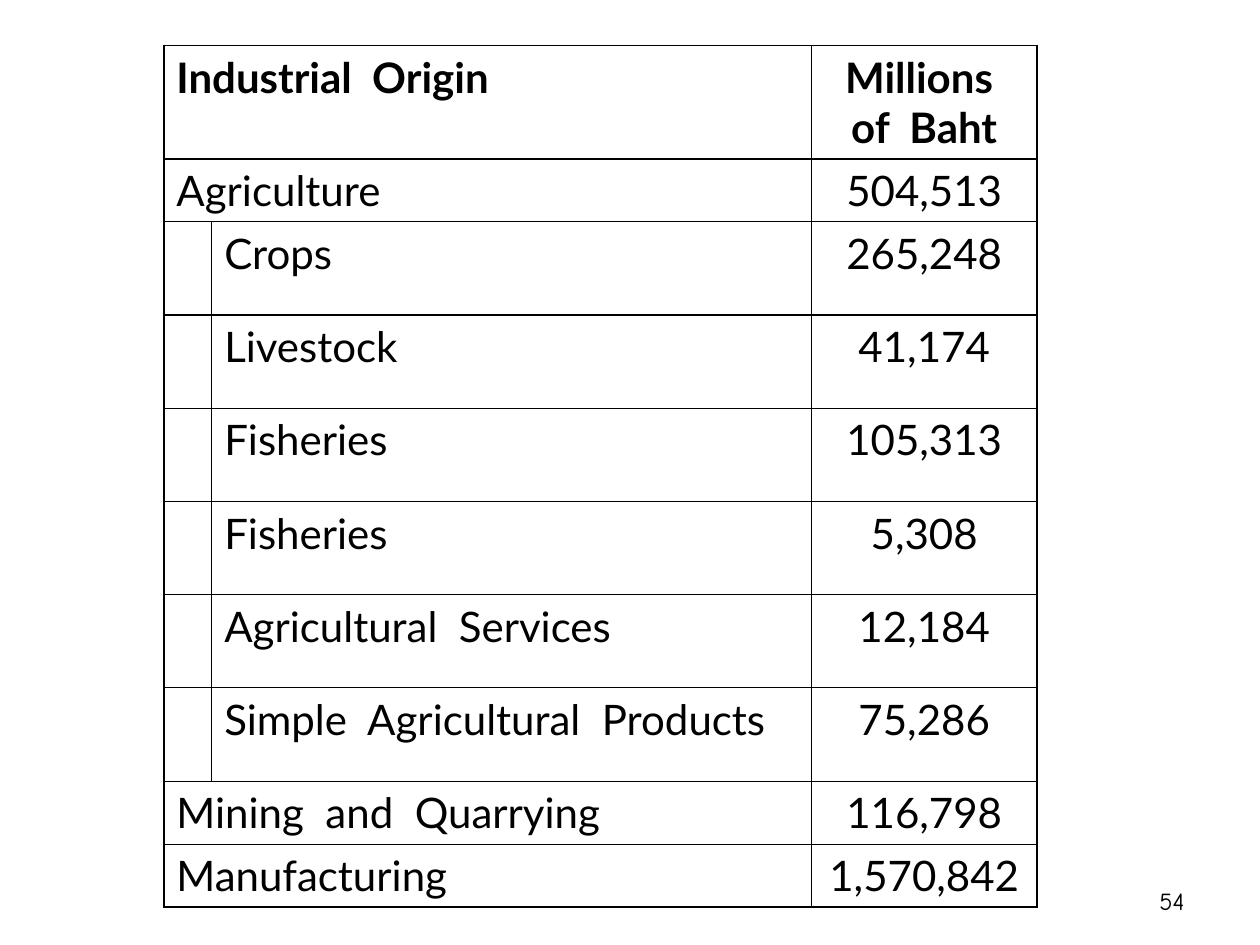
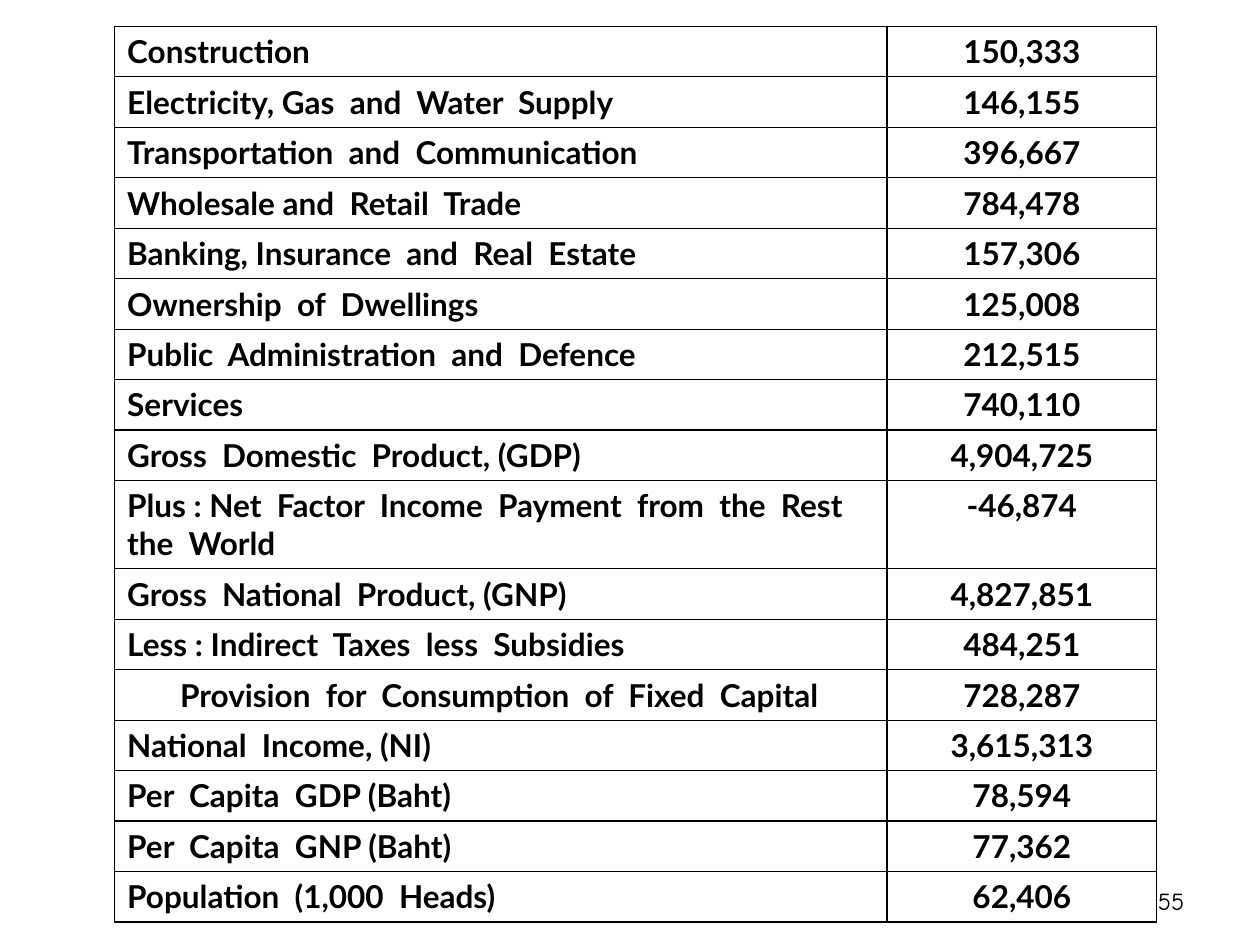
import pptx
import pptx.dml.color
import pptx.enum.text
import pptx.oxml.ns
import pptx.util
from lxml import etree

Inches = pptx.util.Inches
Pt = pptx.util.Pt
ALIGN = pptx.enum.text.PP_ALIGN
ANCHOR = pptx.enum.text.MSO_ANCHOR
BLACK = "000000"
THIN, THICK = 0.75, 1


def rgb(value):
    return pptx.dml.color.RGBColor.from_string(value)


class Deck:
    number_font = {"name": "Comic Neue", "size": Pt(14), "bold": False}
    table_font = "Lato"

    def __init__(self):
        self.prs = pptx.Presentation()
        self.prs.slide_width = Inches(10)
        self.prs.slide_height = Inches(7.5)
        self.s = None

    def slide(self, number):
        self.s = self.prs.slides.add_slide(self.prs.slide_layouts[6])
        sp = self.s.shapes.add_textbox(Inches(7.17), Inches(6.95), Inches(2.33), Inches(0.4))
        sp.text_frame.word_wrap = True
        sp.text_frame.vertical_anchor = ANCHOR.MIDDLE
        self.add_text(sp.text_frame, str(number), ALIGN.RIGHT, self.number_font)

    def add_text(self, tf, text, align, style):
        p = tf.paragraphs[0]
        p.alignment = align
        r = p.add_run()
        r.text = text
        for name, value in style.items():
            setattr(r.font, name, value)
        r.font.color.rgb = rgb(BLACK)
        return p

    def border(self, cell, side, width):
        qn = pptx.oxml.ns.qn
        tc_pr = cell._tc.get_or_add_tcPr()
        ln = etree.SubElement(tc_pr, qn("a:ln" + side), w=str(Pt(width)))
        fill = etree.SubElement(ln, qn("a:solidFill"))
        etree.SubElement(fill, qn("a:srgbClr"), val=BLACK)

    def table(self, left, top, widths, heights, thick_lines):
        frame = self.s.shapes.add_table(
            len(heights), len(widths), Inches(left), Inches(top),
            Inches(sum(widths)), Inches(sum(heights)))
        table = frame.table
        table.first_row = table.horz_banding = False
        for column, width in zip(table.columns, widths):
            column.width = Inches(width)
        for row, height in zip(table.rows, heights):
            row.height = Inches(height)
        self.thick_lines = thick_lines
        return table

    def cell(self, table, row, col, text, size, bold=False, inner_side="", indent=0):
        cell = table.cell(row, col)
        for side, line in (("L", None), ("R", None), ("T", row), ("B", row + 1)):
            if side == "L" and cell.is_spanned:
                continue
            thick = side != inner_side if line is None else line in self.thick_lines
            self.border(cell, side, THICK if thick else THIN)
        cell.fill.background()
        if text:
            last = col == len(table.columns) - 1
            style = {"name": self.table_font, "size": Pt(size), "bold": bold}
            p = self.add_text(cell.text_frame, text, ALIGN.CENTER if last else ALIGN.LEFT, style)
            if indent:
                p._p.get_or_add_pPr().set("marL", str(Inches(indent)))


def origin_slide(deck):
    rows = [
        ("Industrial  Origin", "", "Millions  of  Baht"),
        ("Agriculture", "", "504,513"),
        ("", "Crops", "265,248"),
        ("", "Livestock", "41,174"),
        ("", "Fisheries", "105,313"),
        ("", "Fisheries", "5,308"),
        ("", "Agricultural  Services", "12,184"),
        ("", "Simple  Agricultural  Products", "75,286"),
        ("Mining  and  Quarrying", "", "116,798"),
        ("Manufacturing", "", "1,570,842"),
    ]
    deck.slide(54)
    heights = [0.9] + [0.5 if sector else 0.74 for sector, _, _ in rows[1:]]
    table = deck.table(1.3, 0.36, [0.38, 4.76, 1.79], heights, {0, 1, len(rows)})
    for i, row in enumerate(rows):
        if row[0]:
            table.cell(i, 0).merge(table.cell(i, 1))
        sides = ("", "", "") if row[0] else ("R", "L", "")
        for j, text in enumerate(row):
            deck.cell(table, i, j, text, 24, bold=i == 0, inner_side=sides[j])


def income_slide(deck):
    provision = "Provision  for  Consumption  of  Fixed  Capital"
    net_factor = "Plus : Net  Factor  Income  Payment  from  the  Rest  the  World"
    rows = [
        ("Construction", "150,333"),
        ("Electricity, Gas  and  Water  Supply", "146,155"),
        ("Transportation  and  Communication", "396,667"),
        ("Wholesale and  Retail  Trade", "784,478"),
        ("Banking, Insurance  and  Real  Estate", "157,306"),
        ("Ownership  of  Dwellings", "125,008"),
        ("Public  Administration  and  Defence", "212,515"),
        ("Services", "740,110"),
        ("Gross  Domestic  Product, (GDP)", "4,904,725"),
        (net_factor, "-46,874"),
        ("Gross  National  Product, (GNP)", "4,827,851"),
        ("Less : Indirect  Taxes  less  Subsidies", "484,251"),
        (provision, "728,287"),
        ("National  Income, (NI)", "3,615,313"),
        ("Per  Capita  GDP (Baht)", "78,594"),
        ("Per  Capita  GNP (Baht)", "77,362"),
        ("Population  (1,000  Heads)", "62,406"),
    ]
    deck.slide(55)
    heights = [0.7 if label == net_factor else 0.4 for label, _ in rows]
    count = len(rows)
    table = deck.table(0.91, 0.21, [6.13, 2.14], heights, {0, count - 1, count})
    for i, row in enumerate(rows):
        for j, text in enumerate(row):
            deck.cell(table, i, j, text, 18, bold=True, indent=0.42 if text == provision else 0)


def main():
    deck = Deck()
    origin_slide(deck)
    income_slide(deck)
    deck.prs.save("out.pptx")


if __name__ == "__main__":
    main()
